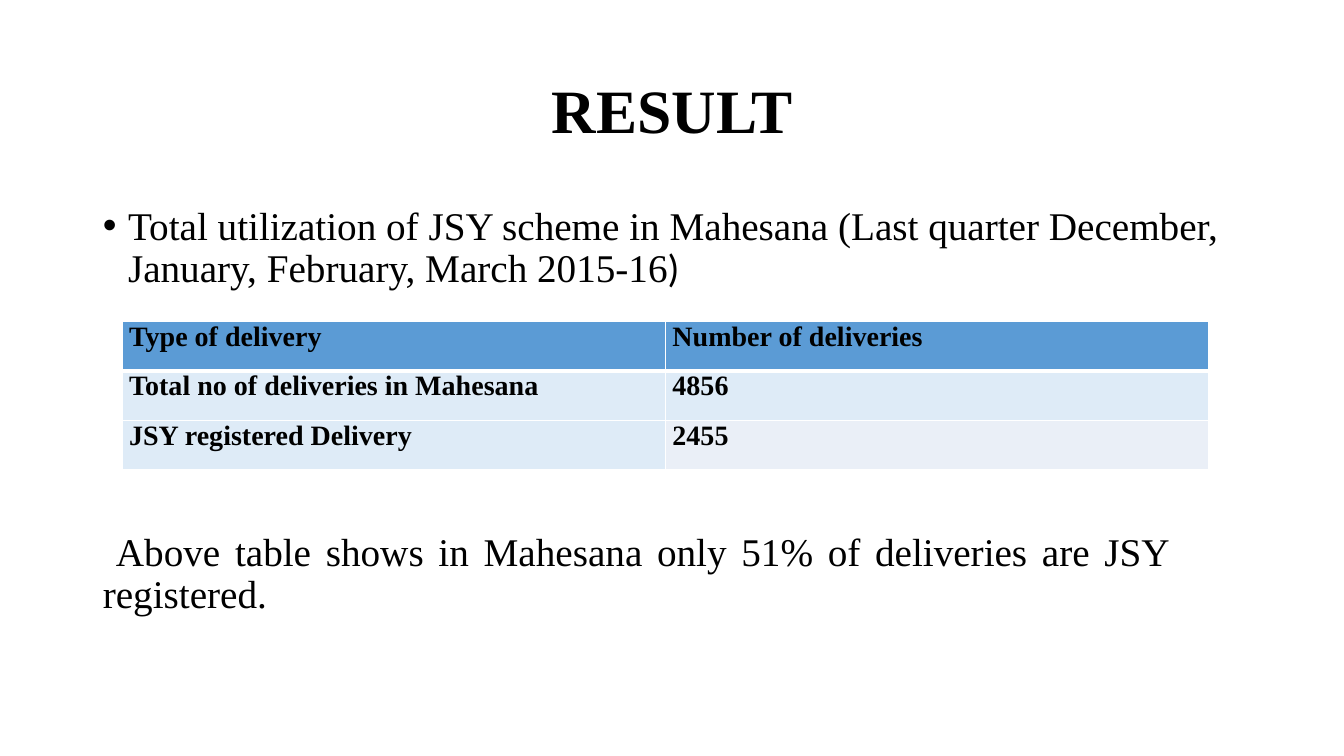
from lxml import etree
from pptx import Presentation
from pptx.dml.color import RGBColor
from pptx.enum.text import MSO_ANCHOR, MSO_AUTO_SIZE, PP_ALIGN
from pptx.oxml.ns import qn
from pptx.util import Pt

PX = 9144
TOP, MIDDLE = MSO_ANCHOR.TOP, MSO_ANCHOR.MIDDLE
CENTER, JUSTIFY = PP_ALIGN.CENTER, PP_ALIGN.JUSTIFY
NO_FIT = MSO_AUTO_SIZE.NONE
SERIF, SANS = "Times New Roman", "Calibri"
COLORS = {
    "text": "000000",
    "header": "5B9BD5",
    "row": "DEEBF7",
    "last": "EAEFF7",
    "border": "FFFFFF",
}


def style_font(font, size, bold=False):
    font.name = SERIF
    font.size = Pt(size)
    font.bold = bold
    font.color.rgb = RGBColor.from_string(COLORS["text"])


def place(item, left, top, width, height):
    item.left, item.top = left * PX, top * PX
    item.width, item.height = width * PX, height * PX


prs = Presentation()
prs.slide_width, prs.slide_height = 1333 * PX, 750 * PX
slide = prs.slides.add_slide(prs.slide_layouts[1])

title = slide.shapes.title
place(title, 92, 40, 1150, 145)
title.text_frame.text = "RESULT"
title.text_frame.vertical_anchor = MIDDLE
title.text_frame.auto_size = NO_FIT
heading = title.text_frame.paragraphs[0]
heading.alignment = CENTER
heading.line_spacing = 0.9
style_font(heading.font, 44, True)

body = slide.placeholders[1]
place(body, 92, 200, 1150, 476)
body.text_frame.vertical_anchor = TOP
body.text_frame.auto_size = NO_FIT

scheme = body.text_frame.paragraphs[0]
scheme.add_run().text = (
    "Total utilization of JSY scheme in Mahesana "
    "(Last quarter December, January, February, March 2015-16"
)
closing = scheme.add_run()
closing.text = ")"
closing.font.name = SANS

finding = body.text_frame.add_paragraph()
finding.text = "Above table shows in Mahesana only 51% of deliveries are JSY registered."
finding.alignment = JUSTIFY

for paragraph, gap, margin, indent in ((scheme, 10, 25, -25), (finding, 172, 0, 13)):
    paragraph.line_spacing = 0.9
    paragraph.space_before = Pt(gap)
    style_font(paragraph.font, 28)
    props = paragraph._p.get_or_add_pPr()
    props.set("marL", str(margin * PX))
    props.set("indent", str(indent * PX))
finding_props = finding._p.get_or_add_pPr()
finding_props.set("marR", str(73 * PX))
etree.SubElement(finding_props, qn("a:buNone"))

deliveries = [
    ("Type of delivery", "Number of deliveries"),
    ("Total no of deliveries in Mahesana", "4856"),
    ("JSY registered Delivery", "2455"),
]
fills = [("header", "header"), ("row", "row"), ("row", "last")]
table = slide.shapes.add_table(3, 2, 121 * PX, 319 * PX, 1078 * PX, 147 * PX).table

for r, row in enumerate(deliveries):
    for c, label in enumerate(row):
        cell = table.cell(r, c)
        cell.text = label
        cell.margin_left = cell.margin_right = 7 * PX
        cell.margin_top = cell.margin_bottom = 0
        style_font(cell.text_frame.paragraphs[0].font, 20, True)
        cell_props = cell._tc.get_or_add_tcPr()
        for side in ("lnL", "lnR", "lnT", "lnB"):
            thick = (r, side) in ((0, "lnB"), (1, "lnT"))
            line = etree.SubElement(cell_props, qn(f"a:{side}"), w=str(Pt(3 if thick else 1)))
            paint = etree.SubElement(line, qn("a:solidFill"))
            etree.SubElement(paint, qn("a:srgbClr"), val=COLORS["border"])
        cell.fill.solid()
        cell.fill.fore_color.rgb = RGBColor.from_string(COLORS[fills[r][c]])

prs.save("out.pptx")
